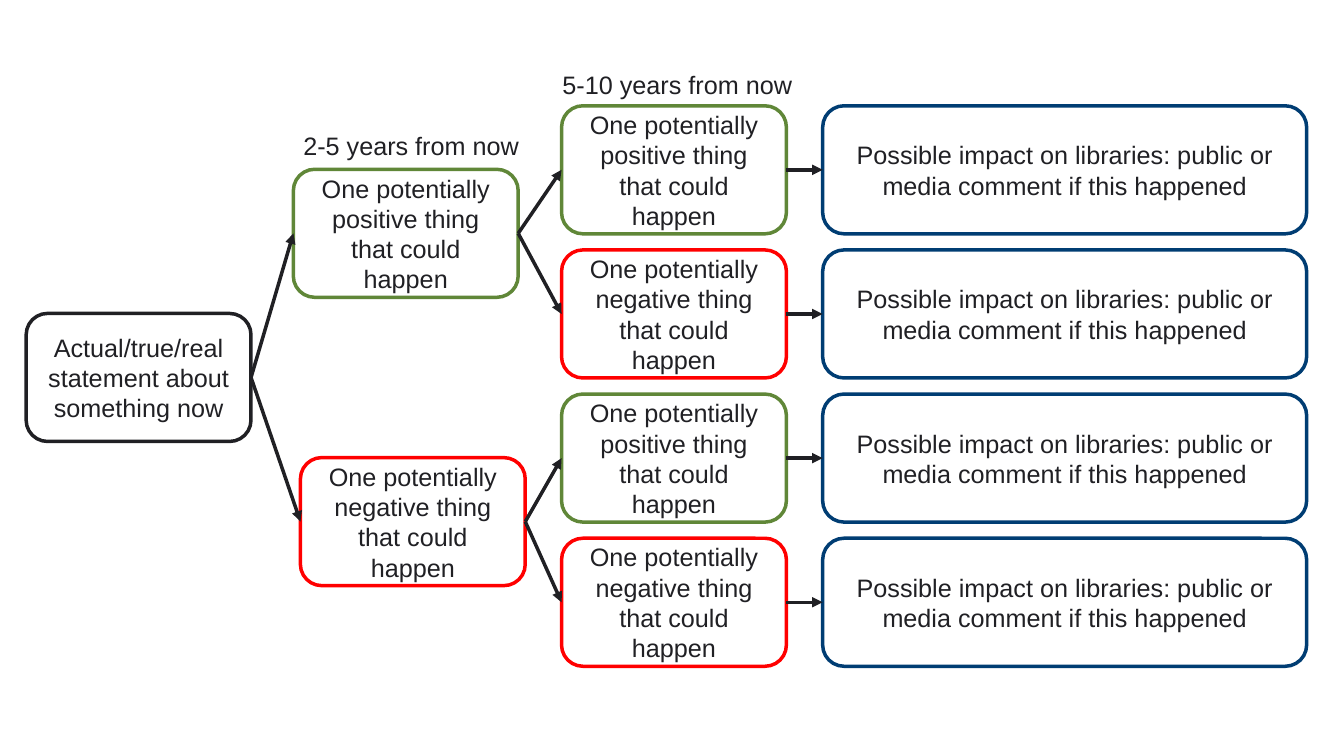
from lxml import etree
from pptx import Presentation
from pptx import util as u
from pptx.dml.color import RGBColor
from pptx.enum import shapes, text
from pptx.oxml import ns

COLORS = {"ink": "202024", "good": "608738", "bad": "FF0000", "impact": "003D73"}
WORDS = {
    "ink": "Actual/true/real statement about something now",
    "good": "One potentially positive thing that could happen",
    "bad": "One potentially negative thing that could happen",
    "impact": "Possible impact on libraries: public or media comment if this happened",
}
LABELS = [("2-5 years from now", 2.91, 1.24, 2.57), ("5-10 years from now", 5.48, 0.64, 2.68)]
START = (0.26, 3.11)
BRANCHES = [("good", 2.91, 1.68), ("bad", 2.98, 4.54)]
LATER, IMPACT = 5.57, 8.16
TOP, STEP = 1.05, 1.43
WIDE, SLIM, HIGH = 4.8, 2.23, 1.27
LINE = 2.5

prs = Presentation()
prs.slide_width, prs.slide_height = u.Inches(13.33), u.Inches(7.5)
slide = prs.slides.add_slide(prs.slide_layouts[6])


def color(key):
    return RGBColor.from_string(COLORS[key])


def write(frame, words):
    frame.word_wrap = True
    frame.text = words
    font = frame.paragraphs[0].runs[0].font
    font.name, font.size = "Arial", u.Pt(18)
    font.color.rgb = color("ink")


def add_box(kind, left, top, width=SLIM):
    box = slide.shapes.add_shape(
        shapes.MSO_SHAPE.ROUNDED_RECTANGLE, *map(u.Inches, (left, top, width, HIGH)))
    box.shadow.inherit = False
    box.fill.background()
    box.line.color.rgb = color(kind)
    box.line.width = u.Pt(LINE)
    write(box.text_frame, WORDS[kind])
    box.text_frame.vertical_anchor = text.MSO_ANCHOR.MIDDLE
    box.text_frame.paragraphs[0].alignment = text.PP_ALIGN.CENTER
    return box


def join(source, target):
    arrow = slide.shapes.add_connector(shapes.MSO_CONNECTOR.STRAIGHT, 0, 0, 0, 0)
    arrow.begin_connect(source, 3)
    arrow.end_connect(target, 1)
    arrow.line.color.rgb = color("ink")
    arrow.line.width = u.Pt(LINE)
    etree.SubElement(arrow.line._get_or_add_ln(), ns.qn("a:tailEnd"), type="triangle")
    etree.SubElement(arrow._element.spPr, ns.qn("a:effectLst"))


start = add_box("ink", *START)
for i, (kind, left, top) in enumerate(BRANCHES):
    branch = add_box(kind, left, top)
    join(start, branch)
    for j, result in enumerate(("good", "bad")):
        row = TOP + STEP * (2 * i + j)
        later = add_box(result, LATER, row)
        impact = add_box("impact", IMPACT, row, WIDE)
        join(branch, later)
        join(later, impact)

for words, left, top, width in LABELS:
    label = slide.shapes.add_textbox(*map(u.Inches, (left, top, width, 0.4)))
    write(label.text_frame, words)

prs.save("out.pptx")
